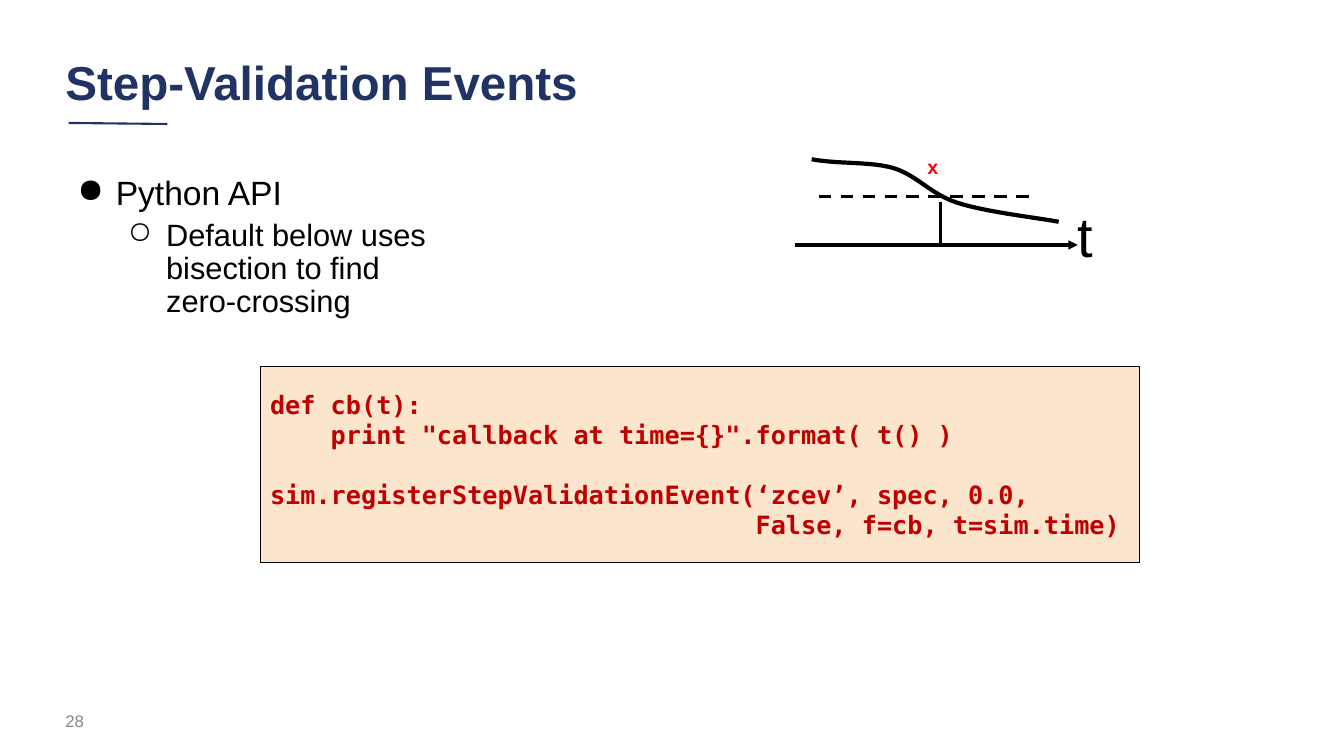
import dataclasses
from typing import Optional

import lxml.etree
import pptx
import pptx.dml.color
import pptx.enum.dml
import pptx.enum.shapes
import pptx.enum.text
import pptx.oxml.ns
import pptx.util

PX = 9144  # EMU in one px, 100 px to the inch


@dataclasses.dataclass(frozen=True)
class Theme:
    navy: str = "213265"
    black: str = "000000"
    grey: str = "888888"
    red: str = "FF0000"
    code_red: str = "C00000"
    code_fill: str = "FBE5CD"
    sans: str = "Arial"
    mono: str = "DejaVu Sans Mono"
    title: int = 34
    body: int = 24
    sub_body: int = 22
    code: int = 18
    axis_label: int = 40
    curve_label: int = 14
    number: int = 12


THEME = Theme()


@dataclasses.dataclass(frozen=True)
class Paragraph:
    text: str
    size: int
    color: str = THEME.black
    bold: bool = False
    font: str = THEME.sans
    line_spacing: float = 1.0
    space_before: int = 0
    bullet: str = ""
    level: int = 0


@dataclasses.dataclass(frozen=True)
class TextBox:
    left: int
    top: int
    width: int
    height: int
    paragraphs: tuple[Paragraph, ...]
    middle: bool = False


@dataclasses.dataclass(frozen=True)
class Line:
    start: tuple[int, int]
    end: tuple[int, int]
    width: float = 2.25
    color: str = THEME.black
    dashed: bool = False
    arrow: bool = False


AXIS_Y = 243
LINES = (
    Line((68, 122), (166, 123), 1.5, THEME.navy),  # title rule
    Line((789, AXIS_Y), (1069, AXIS_Y), arrow=True),  # time axis
    Line((933, 200), (933, AXIS_Y)),  # crossing time
    Line((812, 195), (1029, 195), dashed=True),  # threshold
)
CURVE_START = (805, 158)
CURVE_SEGMENTS = (
    ((831, 163), (864, 160), (887, 167)),
    ((911, 175), (922, 192), (949, 201)),
    ((976, 210), (1028, 216), (1050, 220)),
)
CURVE_STEPS = 12

TEXT_BOXES = (
    TextBox(55, 695, 300, 40, (Paragraph("28", THEME.number, THEME.grey),), True),
    TextBox(55, 46, 1112, 76, (
        Paragraph("Step-Validation Events", THEME.title, THEME.navy, True, line_spacing=0.9),
    ), True),
    TextBox(55, 170, 1224, 476, (
        Paragraph("Python API", THEME.body, line_spacing=0.9, bullet="●"),
        Paragraph("Default below uses \vbisection to find \vzero-crossing", THEME.sub_body,
                  line_spacing=0.9, space_before=5, bullet="○", level=1),
    )),
    TextBox(1059, 195, 56, 77, (Paragraph("t", THEME.axis_label),)),
    TextBox(910, 149, 44, 34, (Paragraph("x", THEME.curve_label, THEME.red, True),)),
)

CODE_LINES = (
    ("def cb(t):", 0),
    ('    print "callback at time={}".format( t() )', 0),
    ("sim.registerStepValidationEvent(‘zcev’, spec, 0.0, ", 21),
    ("                                False, f=cb, t=sim.time)", 0),
)


def rgb(color: str) -> pptx.dml.color.RGBColor:
    return pptx.dml.color.RGBColor.from_string(color)


def apply_format(target, values: dict) -> None:
    for name, value in values.items():
        setattr(target, name, value)


def add_element(parent, tag: str, **attributes: str):
    return lxml.etree.SubElement(parent, pptx.oxml.ns.qn(tag), attributes)


def add_bullet(paragraph, item: Paragraph) -> None:
    properties = paragraph._p.get_or_add_pPr()
    properties.set("marL", str(50 * (item.level + 1) * PX))
    properties.set("indent", str(-38 * PX))
    color = add_element(properties, "a:buClr")
    add_element(color, "a:srgbClr", val=THEME.black)
    add_element(properties, "a:buChar", char=item.bullet)


def fill_text(frame, items: tuple[Paragraph, ...], middle: bool, inset: int = 5) -> None:
    anchor = pptx.enum.text.MSO_ANCHOR
    apply_format(frame, {
        "word_wrap": True,
        "vertical_anchor": anchor.MIDDLE if middle else anchor.TOP,
        "margin_left": 10 * PX, "margin_right": 10 * PX,
        "margin_top": inset * PX, "margin_bottom": inset * PX,
    })
    for index, item in enumerate(items):
        paragraph = frame.add_paragraph() if index else frame.paragraphs[0]
        if item.bullet:
            add_bullet(paragraph, item)
        apply_format(paragraph, {
            "text": item.text, "level": item.level,
            "alignment": pptx.enum.text.PP_ALIGN.LEFT,
            "line_spacing": item.line_spacing,
            "space_before": pptx.util.Pt(item.space_before),
        })
        for run in paragraph.runs:
            apply_format(run.font, {
                "name": item.font, "size": pptx.util.Pt(item.size), "bold": item.bold,
            })
            run.font.color.rgb = rgb(item.color)


def add_text_box(slide, box: TextBox) -> None:
    shape = slide.shapes.add_textbox(box.left * PX, box.top * PX, box.width * PX, box.height * PX)
    fill_text(shape.text_frame, box.paragraphs, box.middle)


def style_line(line, width: float, color: str, dash: Optional[int] = None) -> None:
    line.fill.solid()
    line.fill.fore_color.rgb = rgb(color)
    apply_format(line, {"width": pptx.util.Pt(width), "dash_style": dash})


def add_line(slide, line: Line) -> None:
    connector = slide.shapes.add_connector(
        pptx.enum.shapes.MSO_CONNECTOR.STRAIGHT, *(value * PX for value in line.start + line.end))
    dash = pptx.enum.dml.MSO_LINE.DASH if line.dashed else None
    style_line(connector.line, line.width, line.color, dash)
    if line.arrow:
        add_element(connector.line._get_or_add_ln(), "a:tailEnd", type="triangle")
    add_element(connector._element.spPr, "a:effectLst")


def add_curve(slide) -> None:
    points, start = [], CURVE_START
    for first, second, end in CURVE_SEGMENTS:
        for step in range(1, CURVE_STEPS + 1):
            t = step / CURVE_STEPS
            weights = ((1 - t) ** 3, 3 * t * (1 - t) ** 2, 3 * t * t * (1 - t), t ** 3)
            points.append(tuple(
                sum(weight * value for weight, value in zip(weights, values))
                for values in zip(start, first, second, end)))
        start = end
    # Points in EMU keep the curve smooth
    builder = slide.shapes.build_freeform(*(value * PX for value in CURVE_START))
    builder.add_line_segments([(round(x * PX), round(y * PX)) for x, y in points], close=False)
    curve = builder.convert_to_shape()
    curve.shadow.inherit = False
    curve.fill.background()
    style_line(curve.line, 3, THEME.black)


def add_code(slide) -> None:
    shape = slide.shapes.add_shape(
        pptx.enum.shapes.MSO_SHAPE.RECTANGLE, 258 * PX, 364 * PX, 872 * PX, 194 * PX)
    shape.shadow.inherit = False
    shape.fill.solid()
    shape.fill.fore_color.rgb = rgb(THEME.code_fill)
    style_line(shape.line, 0.75, THEME.black)
    items = tuple(
        Paragraph(text, THEME.code, THEME.code_red, True, THEME.mono, space_before=gap)
        for text, gap in CODE_LINES)
    fill_text(shape.text_frame, items, middle=True, inset=3)


def main() -> None:
    presentation = pptx.Presentation()
    apply_format(presentation, {"slide_width": 1333 * PX, "slide_height": 750 * PX})
    slide = presentation.slides.add_slide(presentation.slide_layouts[6])
    # Title rule and diagram
    for line in LINES:
        add_line(slide, line)
    add_curve(slide)
    # Title, bullets, labels and slide number
    for box in TEXT_BOXES:
        add_text_box(slide, box)
    # Code listing
    add_code(slide)
    presentation.save("out.pptx")


if __name__ == "__main__":
    main()
